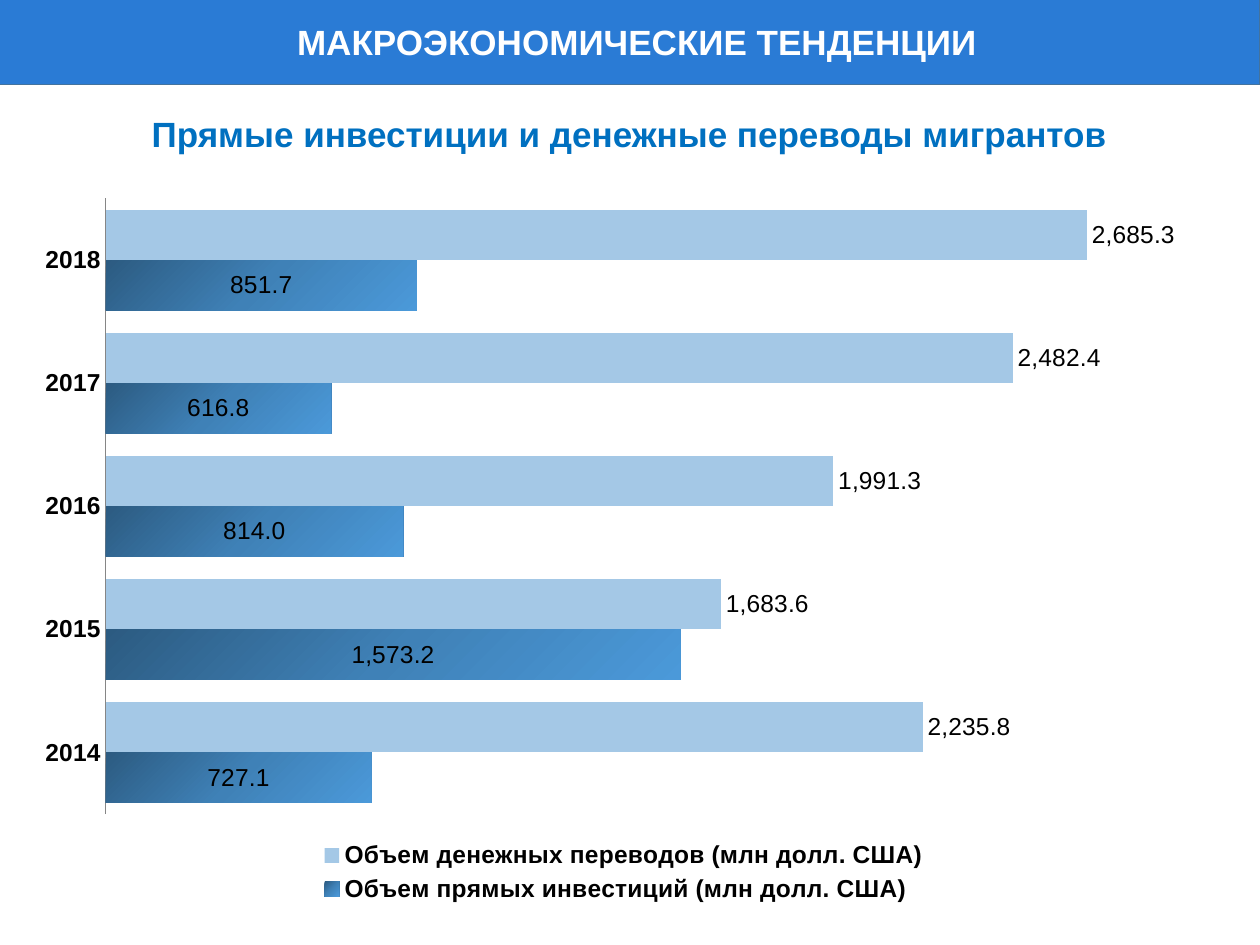
from lxml.etree import SubElement
from pptx import Presentation
from pptx.chart.data import CategoryChartData
from pptx.dml.color import RGBColor
from pptx.enum.chart import (XL_CHART_TYPE, XL_LABEL_POSITION, XL_LEGEND_POSITION,
                             XL_TICK_LABEL_POSITION, XL_TICK_MARK)
from pptx.enum.shapes import MSO_SHAPE
from pptx.enum.text import MSO_ANCHOR, PP_ALIGN
from pptx.oxml import parse_xml
from pptx.oxml.ns import nsdecls, qn
from pptx.util import Inches, Pt

# Content
TITLE = "МАКРОЭКОНОМИЧЕСКИЕ ТЕНДЕНЦИИ"
SUBTITLE = "Прямые инвестиции и денежные переводы мигрантов"
YEARS = ["2014", "2015", "2016", "2017", "2018"]
SERIES = [
    ("Объем прямых инвестиций (млн долл. США)",
     [727.1, 1573.2, 814.0, 616.8, 851.7], XL_LABEL_POSITION.CENTER),
    ("Объем денежных переводов (млн долл. США)",
     [2235.8, 1683.6, 1991.3, 2482.4, 2685.3], XL_LABEL_POSITION.OUTSIDE_END),
]
INVESTMENT_GRADIENT = [(0, "2C5B81"), (50, "3F81B7"), (100, "4B99D9")]
TRANSFER_COLOR = "A4C8E6"
FONT = "Arial"


def color(value):
    return RGBColor.from_string(value)


def format_font(font, size, value="000000", bold=False):
    font.name = FONT
    font.size = Pt(size)
    font.bold = bold
    font.color.rgb = color(value)


def write_text(box, text, size=20, value="000000", bold=True):
    frame = box.text_frame
    frame.word_wrap = True
    frame.vertical_anchor = MSO_ANCHOR.TOP
    frame.margin_left = frame.margin_right = Inches(0.1)
    frame.margin_top = frame.margin_bottom = Inches(0.05)
    para = frame.paragraphs[0]
    para.alignment = PP_ALIGN.CENTER
    span = para.add_run()
    span.text = text
    format_font(span.font, size, value, bold)


def fill_gradient(series, stops, angle):
    properties = series.format.fill._xPr
    stop_xml = "".join(
        f'<a:gs pos="{position * 1000}"><a:srgbClr val="{value}"/></a:gs>'
        for position, value in stops)
    properties.insert(0, parse_xml(
        f'<a:gradFill {nsdecls("a")} rotWithShape="1"><a:gsLst>{stop_xml}</a:gsLst>'
        f'<a:lin ang="{angle * 60000}" scaled="0"/></a:gradFill>'))


def place_part(part, before, left, top, width, height, inner=False):
    """Set a manual layout, in fractions of the chart."""
    for old in part.findall(qn("c:layout")):
        part.remove(old)
    layout = parse_xml(f'<c:layout {nsdecls("c")}><c:manualLayout/></c:layout>')
    settings = [("layoutTarget", "inner")] if inner else []
    settings += [("xMode", "edge"), ("yMode", "edge"),
                 ("x", left), ("y", top), ("w", width), ("h", height)]
    for name, value in settings:
        SubElement(layout[0], qn(f"c:{name}")).set("val", str(value))
    part.find(qn(before)).addprevious(layout)


deck = Presentation()
deck.slide_width, deck.slide_height = Inches(10), Inches(7.5)
page = deck.slides.add_slide(deck.slide_layouts[5])

# Header band, placed behind the title
band = page.shapes.add_shape(MSO_SHAPE.RECTANGLE, Inches(-0.01), Inches(-0.01),
                             Inches(10.01), Inches(0.68))
band.shadow.inherit = False
band.fill.solid()
band.fill.fore_color.rgb = color("2A7BD5")
band.line.color.rgb = color("43739E")
band.line.width = Pt(1)

title = page.shapes.title
title.left, title.top = Inches(0.84), Inches(0.11)
title.width, title.height = Inches(8.43), Inches(0.44)
write_text(title, TITLE, value="FFFFFF")
title._element.addprevious(band._element)

# Subtitle
subtitle = page.shapes.add_textbox(Inches(0.26), Inches(0.84), Inches(9.47), Inches(0.44))
write_text(subtitle, SUBTITLE, value="0070C0")

# Bar chart
data = CategoryChartData(number_format="#,##0.0")
data.categories = YEARS
for name, values, _ in SERIES:
    data.add_series(name, values)
chart = page.shapes.add_chart(XL_CHART_TYPE.BAR_CLUSTERED, Inches(0.17), Inches(1.46),
                              Inches(9.56), Inches(5.75), data).chart
chart.has_title = False
format_font(chart.font, 14)

plot = chart.plots[0]
plot.gap_width = 45
plot.overlap = 0
plot.vary_by_categories = False
for series, (_, _, position) in zip(plot.series, SERIES):
    labels = series.data_labels
    labels.show_value = True
    labels.number_format = "#,##0.0"
    labels.number_format_is_linked = False
    labels.position = position
    format_font(labels.font, 14)
investments, transfers = plot.series
fill_gradient(investments, INVESTMENT_GRADIENT, 45)
transfers.format.fill.solid()
transfers.format.fill.fore_color.rgb = color(TRANSFER_COLOR)

# Axes
years = chart.category_axis
years.major_tick_mark = years.minor_tick_mark = XL_TICK_MARK.NONE
years.format.line.color.rgb = color("868686")
format_font(years.tick_labels.font, 14, bold=True)
amounts = chart.value_axis
amounts.minimum_scale, amounts.maximum_scale = 0, 3000
amounts.has_major_gridlines = False
amounts.tick_label_position = XL_TICK_LABEL_POSITION.NONE
amounts.visible = False

# Legend and layout
chart.has_legend = True
legend = chart.legend
legend.position = XL_LEGEND_POSITION.BOTTOM
legend.include_in_layout = False
format_font(legend.font, 14, bold=True)
place_part(legend._element, "c:overlay", 0.25, 0.9, 0.5, 0.1)
place_part(chart._chartSpace.chart.plotArea, "c:barChart", 0.07, 0.02, 0.91, 0.85, inner=True)

deck.save("out.pptx")
